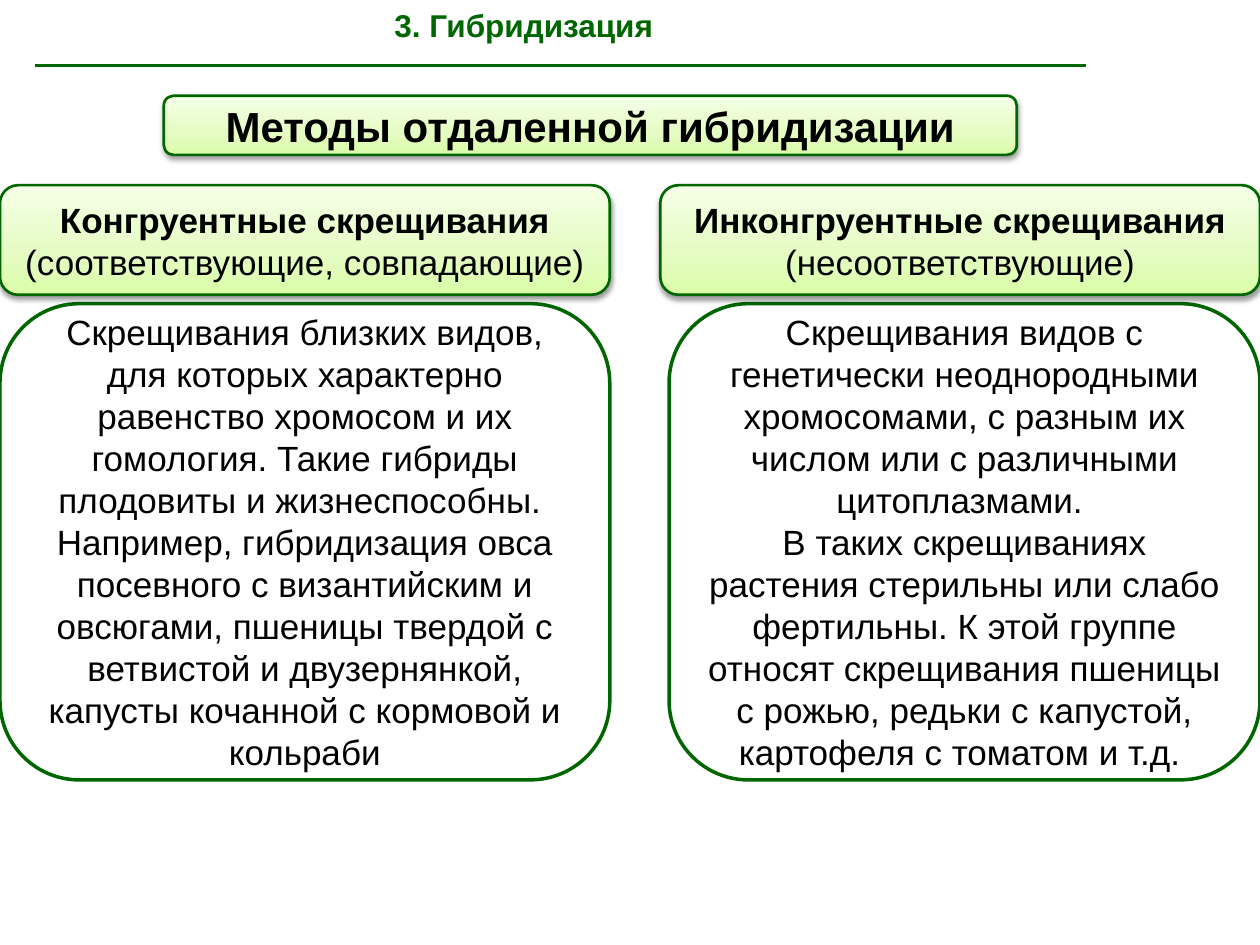
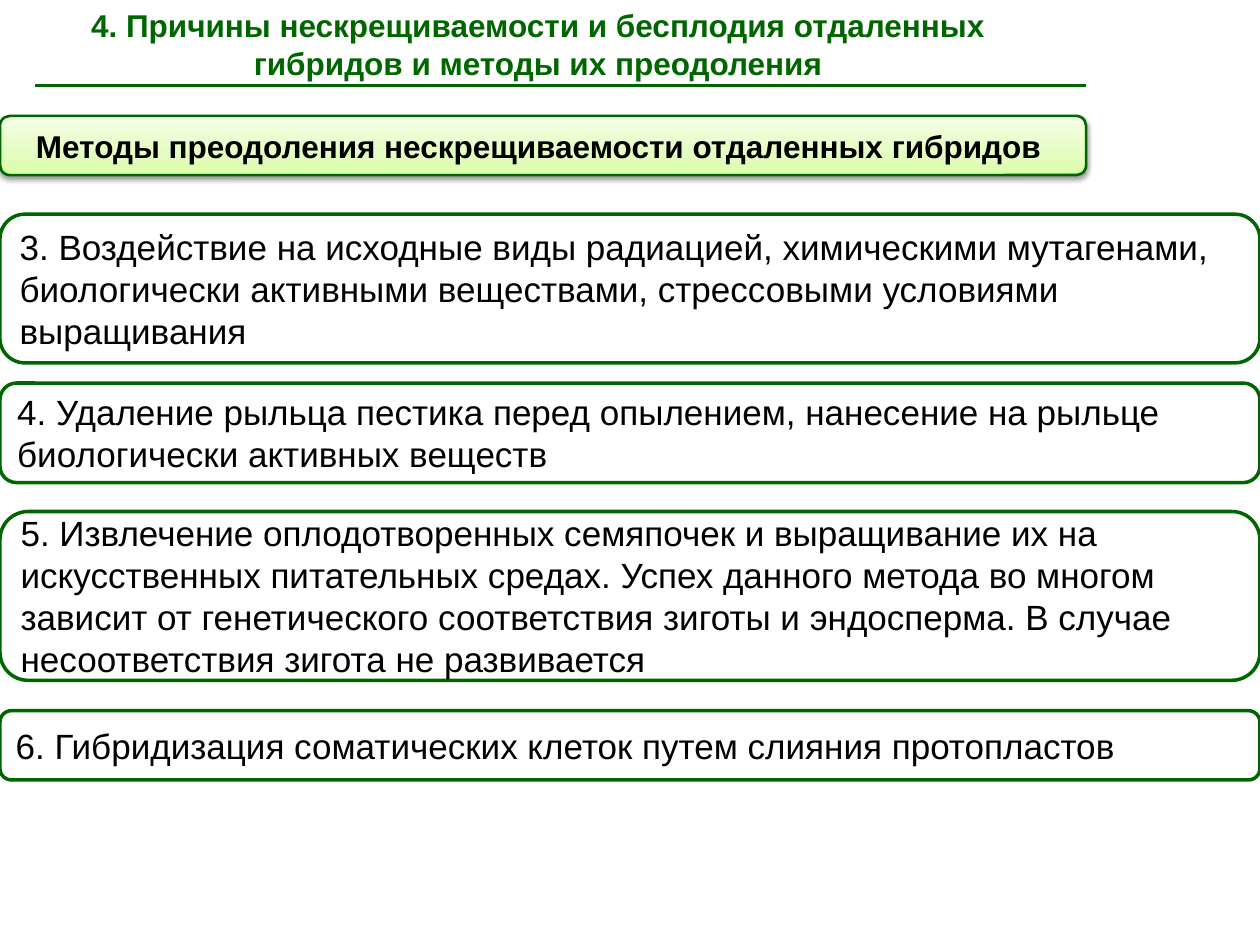
from copy import deepcopy

from lxml.etree import SubElement
from pptx import Presentation
from pptx.dml.color import RGBColor
from pptx.enum.shapes import MSO_CONNECTOR as Connector, MSO_SHAPE as Shape
from pptx.enum.text import MSO_ANCHOR as Anchor, MSO_AUTO_SIZE as AutoSize, PP_ALIGN as Align
from pptx.oxml.ns import qn
from pptx.util import Inches, Pt

FONT = "Arial"
GREEN = "006600"
BLACK = "000000"
BAND_STOPS = [(0, "DAFDA7"), (0.35, "E4FCC2"), (1, "F5FFE7")]
SLIDE_WIDTH = 10
RULE_LEFT, RULE_RIGHT = 0.28, 8.62
TITLE_ONLY = 5

CROSSINGS = [
    (0, 0, 4.84, "Конгруентные скрещивания", " (соответствующие, совпадающие)", [
        "Скрещивания близких видов, для которых характерно равенство хромосом "
        "и их гомология. Такие гибриды плодовиты и жизнеспособны. ",
        "Например, гибридизация овса посевного с византийским и овсюгами, "
        "пшеницы твердой с ветвистой и двузернянкой, капусты кочанной "
        "с кормовой и кольраби",
    ]),
    (5.24, 5.31, SLIDE_WIDTH, "Инконгруентные скрещивания", " (несоответствующие)", [
        "Скрещивания видов с генетически неоднородными хромосомами, с разным "
        "их числом или с различными цитоплазмами. ",
        "В таких скрещиваниях растения стерильны или слабо фертильны. К этой "
        "группе относят скрещивания пшеницы с рожью, редьки с капустой, "
        "картофеля с томатом и т.д. ",
    ]),
]

METHODS = [
    (1.7, 1.18, "3. Воздействие на исходные виды радиацией, химическими мутагенами, "
                "биологически активными веществами, стрессовыми условиями выращивания"),
    (3.04, 0.79, "4. Удаление рыльца пестика перед опылением, нанесение на рыльце "
                 "биологически активных веществ"),
    (4.06, 1.34, "5. Извлечение оплодотворенных семяпочек и выращивание их на "
                 "искусственных питательных средах. Успех данного метода во многом "
                 "зависит от генетического соответствия зиготы и эндосперма. "
                 "В случае несоответствия зигота не развивается"),
    (5.64, 0.55, "6. Гибридизация соматических клеток путем слияния протопластов"),
]


def color(hex_value):
    return RGBColor.from_string(hex_value)


def format_run(run, size, hex_value=BLACK, bold=False):
    run.font.name = FONT
    run.font.size = Pt(size)
    run.font.bold = bold
    run.font.color.rgb = color(hex_value)


def add_titled_slide(presentation, text, box, rule_top, align):
    slide = presentation.slides.add_slide(presentation.slide_layouts[TITLE_ONLY])
    title = slide.shapes.title
    title.left, title.top, title.width, title.height = map(Inches, box)
    frame = title.text_frame
    frame.text = text
    frame.word_wrap = True
    frame.auto_size = AutoSize.SHAPE_TO_FIT_TEXT
    frame.vertical_anchor = Anchor.TOP
    paragraph = frame.paragraphs[0]
    paragraph.alignment = align
    format_run(paragraph.runs[0], 18, GREEN, True)

    rule = slide.shapes.add_connector(
        Connector.STRAIGHT, Inches(RULE_LEFT), Inches(rule_top), Inches(RULE_RIGHT), Inches(rule_top))
    rule.line.color.rgb = color(GREEN)
    rule.line.width = Pt(2)
    SubElement(rule._element.spPr, qn("a:effectLst"))
    return slide


def add_rounded_box(slide, box, line_width, align, paragraphs, size):
    shape = slide.shapes.add_shape(Shape.ROUNDED_RECTANGLE, *map(Inches, box))
    shape.shadow.inherit = False
    shape.fill.background()
    shape.line.color.rgb = color(GREEN)
    shape.line.width = Pt(line_width)
    frame = shape.text_frame
    frame.word_wrap = True
    frame.vertical_anchor = Anchor.MIDDLE
    frame.text = "\n".join(paragraphs)
    for paragraph in frame.paragraphs:
        paragraph.alignment = align
        format_run(paragraph.runs[0], size)
    return shape


def apply_band_gradient(shape):
    shape.fill.gradient()
    shape.fill.gradient_angle = 90
    stop_list = shape._element.spPr.find(".//" + qn("a:gsLst"))
    stop_list.insert(1, deepcopy(stop_list[0]))
    for stop, (position, hex_value) in zip(shape.fill.gradient_stops, BAND_STOPS):
        stop.position = position
        stop.color.rgb = color(hex_value)


def apply_band_shadow(shape):
    effects = shape._element.spPr.find(qn("a:effectLst"))
    shadow = SubElement(effects, qn("a:outerShdw"), blurRad=str(Pt(3.1)), dist=str(Pt(1.6)),
                        dir="5400000", rotWithShape="0")
    shade = SubElement(shadow, qn("a:srgbClr"), val=BLACK)
    SubElement(shade, qn("a:alpha"), val="38000")


def add_band(slide, box, heading, size, detail=""):
    band = add_rounded_box(slide, box, 1.5, Align.CENTER, [heading], size)
    apply_band_gradient(band)
    apply_band_shadow(band)
    paragraph = band.text_frame.paragraphs[0]
    paragraph.runs[0].font.bold = True
    if detail:
        run = paragraph.add_run()
        run.text = detail
        format_run(run, size)


def build_crossings_slide(presentation):
    slide = add_titled_slide(presentation, "3. Гибридизация", (3.03, 0, 2.35, 0.4), 0.52, Align.LEFT)
    add_band(slide, (1.3, 0.76, 6.77, 0.47), "Методы отдаленной гибридизации", 24)
    for band_left, body_left, right, heading, detail, paragraphs in CROSSINGS:
        add_rounded_box(slide, (body_left, 2.41, right - body_left, 3.78), 2,
                        Align.CENTER, paragraphs, 20)
        add_band(slide, (band_left, 1.47, right - band_left, 0.87), heading, 20, detail)


def build_methods_slide(presentation):
    slide = add_titled_slide(
        presentation,
        "4. Причины нескрещиваемости и бесплодия отдаленных гибридов и методы их преодоления",
        (0, 0, 8.54, 0.71), 0.68, Align.CENTER)
    add_band(slide, (0, 0.92, RULE_RIGHT, 0.47),
             "Методы преодоления нескрещиваемости отдаленных гибридов ", 18)
    for top, height, text in METHODS:
        add_rounded_box(slide, (0, top, SLIDE_WIDTH, height), 2, Align.LEFT, [text], 20)


def main():
    presentation = Presentation()
    presentation.slide_width = Inches(SLIDE_WIDTH)
    presentation.slide_height = Inches(7.5)
    build_crossings_slide(presentation)
    build_methods_slide(presentation)
    presentation.save("out.pptx")


if __name__ == "__main__":
    main()
